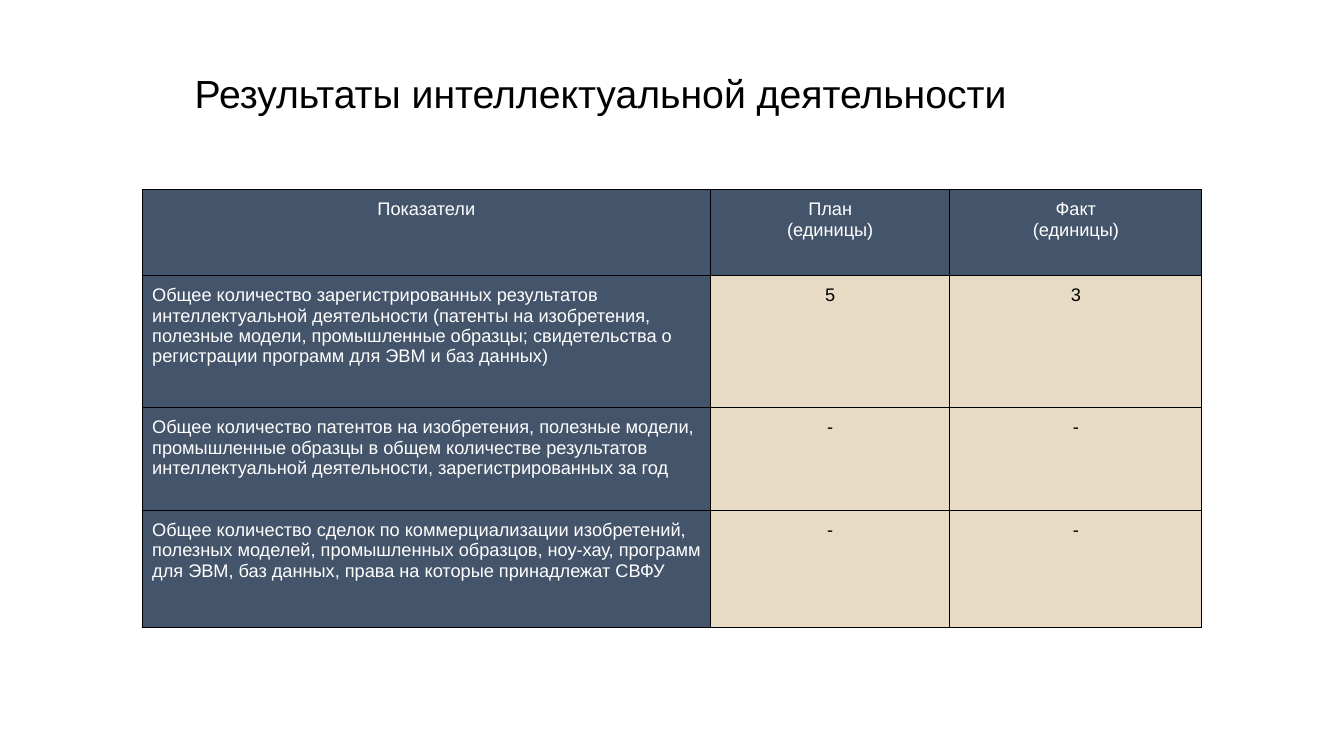
from pptx import Presentation
from pptx.dml.color import RGBColor
from pptx.enum.text import MSO_ANCHOR as Anchor, MSO_AUTO_SIZE as AutoSize, PP_ALIGN as Align
from pptx.oxml import parse_xml
from pptx.oxml.ns import nsdecls
from pptx.util import Pt

BLACK = RGBColor(0x00, 0x00, 0x00)
WHITE = RGBColor(0xFF, 0xFF, 0xFF)
SLATE = RGBColor(0x44, 0x54, 0x6A)
SAND = RGBColor(0xE8, 0xDB, 0xC5)

HEADINGS = ["Показатели", "План\n(единицы)", "Факт\n(единицы)"]
INDICATORS = [
    ["Общее количество зарегистрированных результатов интеллектуальной деятельности "
     "(патенты на изобретения, полезные модели, промышленные образцы; свидетельства о "
     "регистрации программ для ЭВМ и баз данных)", "5", "3"],
    ["Общее количество патентов на изобретения, полезные модели, промышленные образцы "
     "в общем количестве результатов интеллектуальной деятельности, "
     "зарегистрированных за год", "-", "-"],
    ["Общее количество сделок по коммерциализации изобретений, полезных моделей, "
     "промышленных образцов, ноу-хау, программ для ЭВМ, баз данных, права на которые "
     "принадлежат СВФУ", "-", "-"],
]


class ResultsSlide:
    font_name = "Arial"
    title_size = 28
    cell_size = 13
    cell_margin = 7.2
    border_width = 0.75

    def __init__(self, deck):
        self.slide = deck.slides.add_slide(deck.slide_layouts[5])

    def add_text(self, frame, text, size, color, align):
        for index, line in enumerate(text.split("\n")):
            paragraph = frame.add_paragraph() if index else frame.paragraphs[0]
            paragraph.alignment = align
            run = paragraph.add_run()
            run.text = line
            run.font.name = self.font_name
            run.font.size = Pt(size)
            run.font.color.rgb = color

    def title(self, text, left, top, width, height):
        heading = self.slide.shapes.title
        heading.left, heading.top = Pt(left), Pt(top)
        heading.width, heading.height = Pt(width), Pt(height)
        frame = heading.text_frame
        frame.word_wrap = True
        frame.auto_size = AutoSize.SHAPE_TO_FIT_TEXT
        frame.vertical_anchor = Anchor.TOP
        self.add_text(frame, text, self.title_size, BLACK, Align.LEFT)

    def border(self, cell):
        properties = cell._tc.get_or_add_tcPr()
        for side in ("lnL", "lnR", "lnT", "lnB"):
            properties.append(parse_xml(
                f'<a:{side} {nsdecls("a")} w="{Pt(self.border_width)}"><a:solidFill>'
                f'<a:srgbClr val="{BLACK}"/></a:solidFill></a:{side}>'))

    def cell(self, cell, text, fill, color, align):
        self.border(cell)
        cell.fill.solid()
        cell.fill.fore_color.rgb = fill
        cell.margin_left = cell.margin_right = Pt(self.cell_margin)
        cell.margin_top = cell.margin_bottom = Pt(self.cell_margin)
        self.add_text(cell.text_frame, text, self.cell_size, color, align)

    def table(self, rows, left, top, widths, heights):
        grid = self.slide.shapes.add_table(
            len(rows), len(widths), Pt(left), Pt(top),
            Pt(sum(widths)), Pt(sum(heights))).table
        for column, width in zip(grid.columns, widths):
            column.width = Pt(width)
        for row, height in zip(grid.rows, heights):
            row.height = Pt(height)
        for r, texts in enumerate(rows):
            for c, text in enumerate(texts):
                is_value = r > 0 and c > 0
                is_indicator = r > 0 and c == 0
                self.cell(grid.cell(r, c), text,
                          SAND if is_value else SLATE,
                          BLACK if is_value else WHITE,
                          Align.LEFT if is_indicator else Align.CENTER)


def main():
    deck = Presentation()
    deck.slide_width, deck.slide_height = Pt(960), Pt(540)
    results = ResultsSlide(deck)
    results.title("Результаты интеллектуальной деятельности", 131.8, 46.1, 642.2, 41)
    results.table([HEADINGS] + INDICATORS, 101.5, 135.2,
                  [406, 171, 180], [61.4, 94.3, 73.4, 83.8])
    deck.save("out.pptx")


if __name__ == "__main__":
    main()
